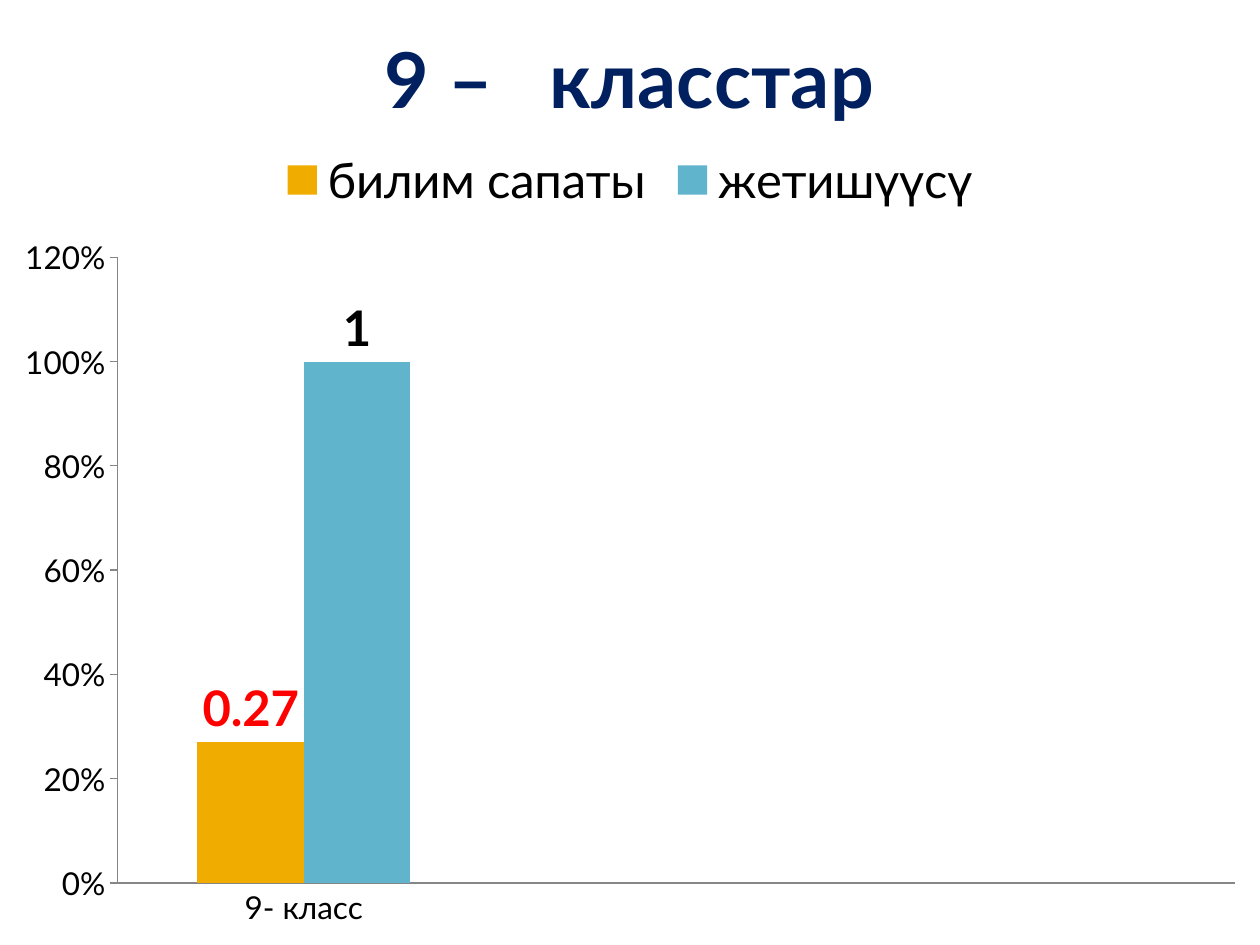
import pptx
import pptx.chart.data
import pptx.dml.color
import pptx.enum.chart
import pptx.util

COLOURS = {
    "navy": "002060",
    "amber": "F0AD00",
    "teal": "60B5CC",
    "red": "FF0000",
    "black": "000000",
    "grey": "868686",
}

TITLE_PARTS = ["9 –   ", "класстар"]

# Two unnamed categories leave the right part of the plot free
CATEGORIES = ["9- класс", "", ""]
SERIES = [
    {"name": "билим сапаты", "values": [0.27, None, None], "fill": "amber", "label": "red"},
    {"name": "жетишүүсү", "values": [1, None, None], "fill": "teal", "label": "black"},
]

FORMATS = {
    "base": {"name": "Lato", "size": pptx.util.Pt(18), "bold": False},
    "title": {"name": "Lato", "size": pptx.util.Pt(44), "bold": True},
    "legend": {"name": "Lato", "size": pptx.util.Pt(28), "bold": False},
    "label": {"name": "Lato", "size": pptx.util.Pt(28), "bold": True},
}


def colour(name):
    return pptx.dml.color.RGBColor.from_string(COLOURS[name])


def set_attributes(target, values):
    for name, value in values.items():
        setattr(target, name, value)


def format_font(font, kind, colour_name="black"):
    set_attributes(font, FORMATS[kind])
    font.color.rgb = colour(colour_name)


def add_column_chart(page, width, height):
    data = pptx.chart.data.CategoryChartData()
    data.categories = CATEGORIES
    for entry in SERIES:
        data.add_series(entry["name"], entry["values"])
    frame = page.shapes.add_chart(
        pptx.enum.chart.XL_CHART_TYPE.COLUMN_CLUSTERED, 0, 0, width, height, data
    )
    format_font(frame.chart.font, "base")
    return frame.chart


def format_title(chart, parts):
    chart.has_title = True
    chart.chart_title.include_in_layout = False
    paragraph = chart.chart_title.text_frame.paragraphs[0]
    for part in parts:
        span = paragraph.add_run()
        span.text = part
        format_font(span.font, "title", "navy")


def format_legend(chart):
    chart.has_legend = True
    set_attributes(chart.legend, {
        "position": pptx.enum.chart.XL_LEGEND_POSITION.TOP,
        "include_in_layout": False,
    })
    format_font(chart.legend.font, "legend")


def format_axes(chart):
    marks = pptx.enum.chart.XL_TICK_MARK
    for axis, mark in ((chart.category_axis, marks.NONE), (chart.value_axis, marks.OUTSIDE)):
        set_attributes(axis, {
            "has_major_gridlines": False,
            "major_tick_mark": mark,
            "minor_tick_mark": marks.NONE,
        })
        axis.format.line.color.rgb = colour("grey")
        axis.format.line.width = pptx.util.Pt(0.75)
    set_attributes(chart.value_axis, {
        "minimum_scale": 0, "maximum_scale": 1.2, "major_unit": 0.2,
    })
    set_attributes(chart.value_axis.tick_labels, {
        "number_format": "0%", "number_format_is_linked": False,
    })


def format_columns(chart):
    plot = chart.plots[0]
    set_attributes(plot, {"gap_width": 150, "overlap": 0, "vary_by_categories": False})
    for series, entry in zip(plot.series, SERIES):
        series.format.fill.solid()
        series.format.fill.fore_color.rgb = colour(entry["fill"])
        labels = series.data_labels
        set_attributes(labels, {
            "show_value": True,
            "number_format": "General",
            "number_format_is_linked": False,
            "position": pptx.enum.chart.XL_LABEL_POSITION.OUTSIDE_END,
        })
        format_font(labels.font, "label", entry["label"])


def main():
    # Slide
    deck = pptx.Presentation()
    deck.slide_width = pptx.util.Inches(10)
    deck.slide_height = pptx.util.Inches(7.5)
    page = deck.slides.add_slide(deck.slide_layouts[6])

    # Chart filling the whole slide
    chart = add_column_chart(page, deck.slide_width, deck.slide_height)
    format_title(chart, TITLE_PARTS)
    format_legend(chart)
    format_axes(chart)
    format_columns(chart)

    deck.save("out.pptx")


if __name__ == "__main__":
    main()
